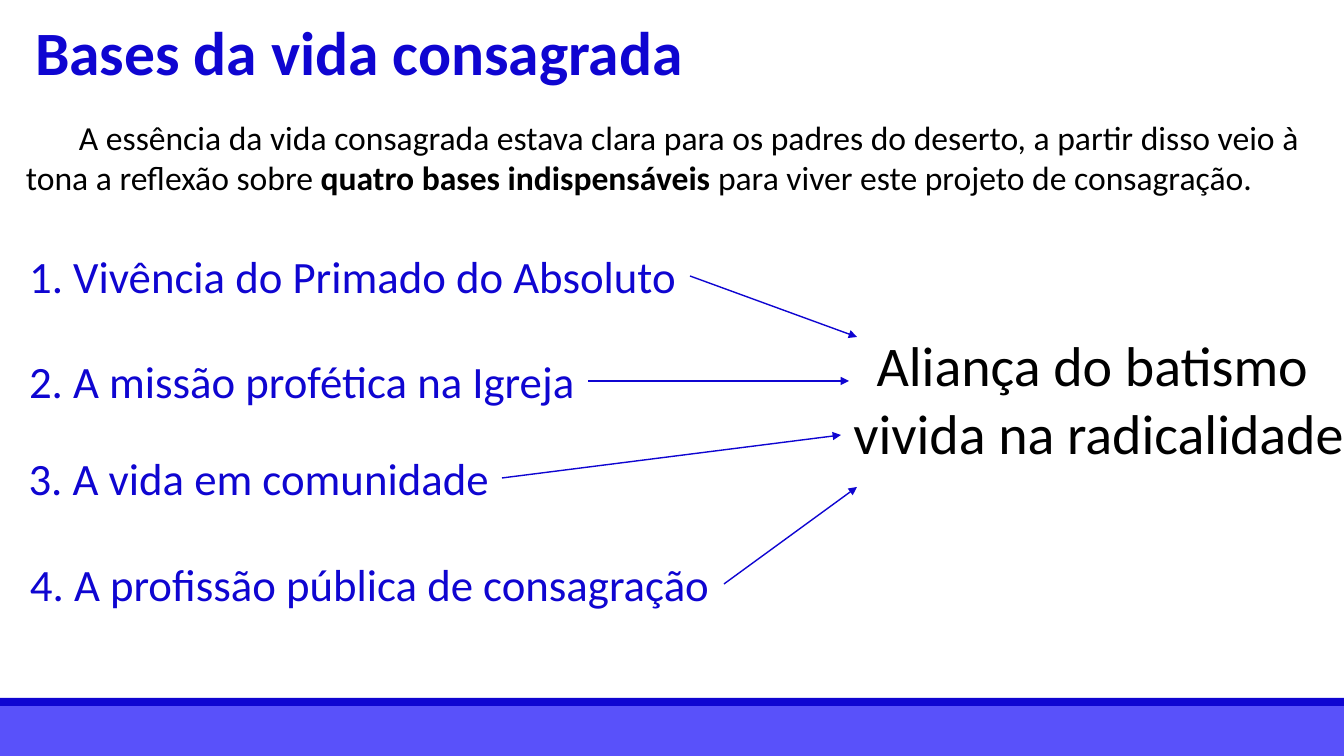
"""Build the slide on the four bases of consecrated life."""
from lxml import etree
from pptx import Presentation
from pptx.dml.color import RGBColor
from pptx.enum.shapes import MSO_CONNECTOR, MSO_SHAPE
from pptx.enum.text import MSO_ANCHOR, MSO_AUTO_SIZE, PP_ALIGN
from pptx.oxml.ns import qn
from pptx.util import Emu, Pt

RECTANGLE = MSO_SHAPE.RECTANGLE
STRAIGHT = MSO_CONNECTOR.STRAIGHT
LEFT, CENTER = PP_ALIGN.LEFT, PP_ALIGN.CENTER
TOP, FIT_SHAPE = MSO_ANCHOR.TOP, MSO_AUTO_SIZE.SHAPE_TO_FIT_TEXT
RIGHT_SIDE = 3
TITLE_ONLY = 5

WIDTH, HEIGHT = 1344, 756
SCALE = 12192000 / WIDTH
BLUE, LIGHT_BLUE, BLACK = "0F05D1", "5951FA", "000000"
FONT = "Calibri"

BARS = [(706, 50, LIGHT_BLUE), (698, 8, BLUE)]
TITLE = [[("Bases da vida consagrada", True)]]
TITLE_BOX = (22, 9, 675, 85)
INTRO = [
    [("A essência da vida consagrada estava clara para os padres do deserto, "
      "a partir disso veio à", False)],
    [("tona a reflexão sobre ", False), ("quatro bases indispensáveis ", True),
     ("para viver este projeto de consagração.", False)],
]
INTRO_BOX = (16, 112, 1312, 92)
INTRO_INDENT = 53
BASES = [
    ("1. Vivência do Primado do Absoluto", 244, 674, (857, 337)),
    ("2. A missão profética na Igreja", 349, 572, (849, 381)),
    ("3. A vida em comunidade", 446, 486, (841, 435)),
    ("4. A profissão pública de consagração", 552, 708, (857, 487)),
]
BASE_LEFT, BASE_HEIGHT = 16, 64
RESULT = [[("Aliança do batismo ", False)], [("vivida na radicalidade", False)]]
RESULT_BOX = (841, 326, 515, 146)


def px(value):
    return Emu(round(value * SCALE))


def color(value):
    return RGBColor.from_string(value)


def fill_text(shape, paragraphs, size, text_color, align):
    frame = shape.text_frame
    frame.word_wrap = False
    frame.auto_size = FIT_SHAPE
    frame.vertical_anchor = TOP
    for index, runs in enumerate(paragraphs):
        paragraph = frame.add_paragraph() if index else frame.paragraphs[0]
        paragraph.alignment = align
        for text, bold in runs:
            run = paragraph.add_run()
            run.text = text
            run.font.name = FONT
            run.font.size = Pt(size)
            run.font.bold = bold
            run.font.color.rgb = color(text_color)


def add_text(slide, box, paragraphs, size, text_color, align=CENTER):
    shape = slide.shapes.add_textbox(*map(px, box))
    fill_text(shape, paragraphs, size, text_color, align)
    return shape


def add_bar(slide, top, height, fill):
    bar = slide.shapes.add_shape(RECTANGLE, 0, px(top), px(WIDTH), px(height))
    bar.shadow.inherit = False
    bar.fill.solid()
    bar.fill.fore_color.rgb = color(fill)
    bar.line.fill.background()


def add_arrow(slide, source, end):
    x, y = map(px, end)
    arrow = slide.shapes.add_connector(STRAIGHT, x, y, x, y)
    arrow.begin_connect(source, RIGHT_SIDE)
    arrow.line.color.rgb = color(BLUE)
    arrow.line.width = Pt(1)
    etree.SubElement(arrow.line._get_or_add_ln(), qn("a:tailEnd"), type="triangle")
    etree.SubElement(arrow._element.spPr, qn("a:effectLst"))


def main():
    presentation = Presentation()
    presentation.slide_width, presentation.slide_height = px(WIDTH), px(HEIGHT)
    slide = presentation.slides.add_slide(presentation.slide_layouts[TITLE_ONLY])
    for bar in BARS:
        add_bar(slide, *bar)

    title = slide.shapes.title
    title.left, title.top, title.width, title.height = map(px, TITLE_BOX)
    fill_text(title, TITLE, 44, BLUE, CENTER)

    intro = add_text(slide, INTRO_BOX, INTRO, 24, BLACK, LEFT)
    first_line = intro.text_frame.paragraphs[0]._p.get_or_add_pPr()
    first_line.set("indent", str(px(INTRO_INDENT)))

    bases = []
    for text, top, width, end in BASES:
        box = (BASE_LEFT, top, width, BASE_HEIGHT)
        bases.append((add_text(slide, box, [[(text, False)]], 32, BLUE), end))
    for base, end in bases:
        add_arrow(slide, base, end)
    add_text(slide, RESULT_BOX, RESULT, 40, BLACK)

    presentation.save("out.pptx")


if __name__ == "__main__":
    main()
